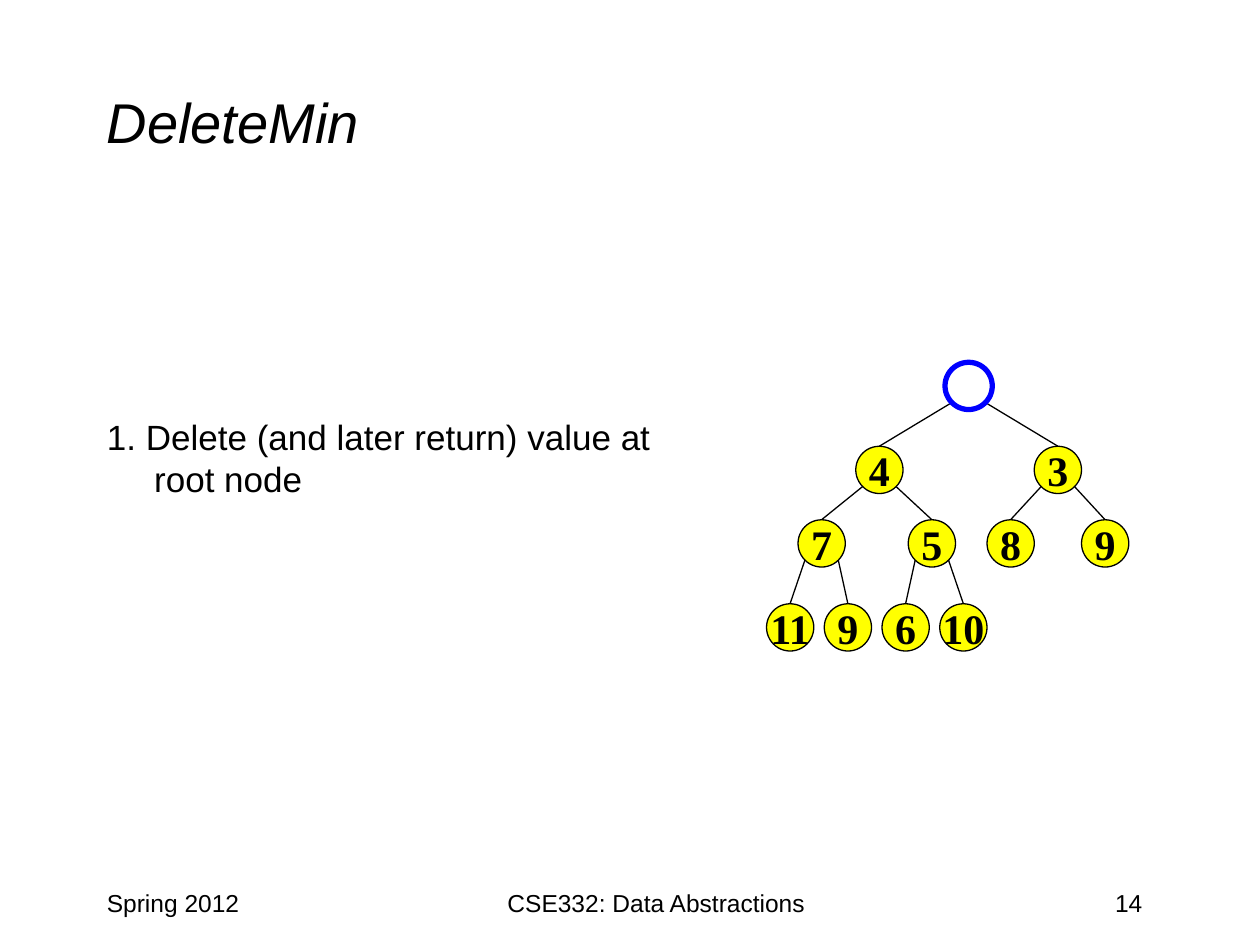
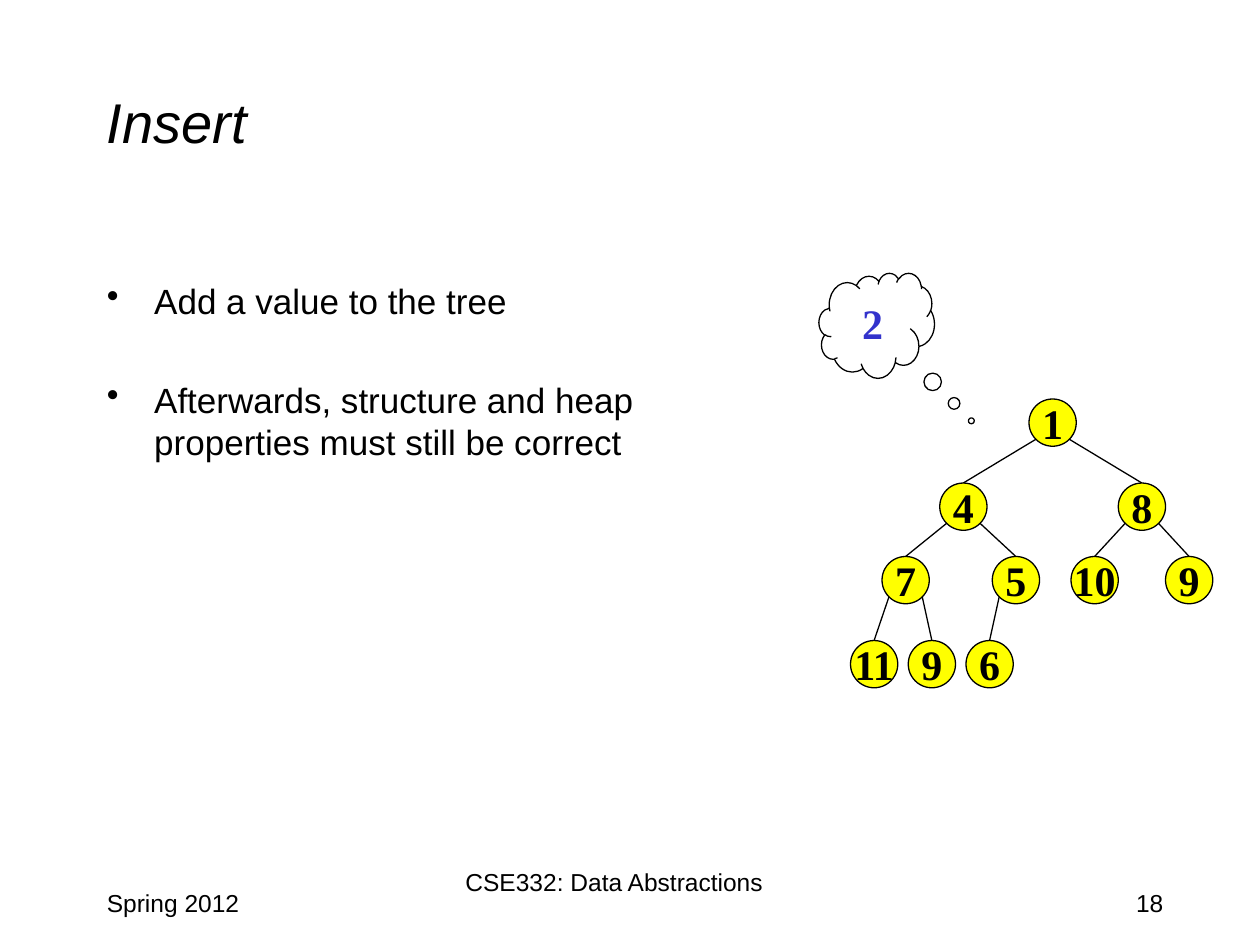
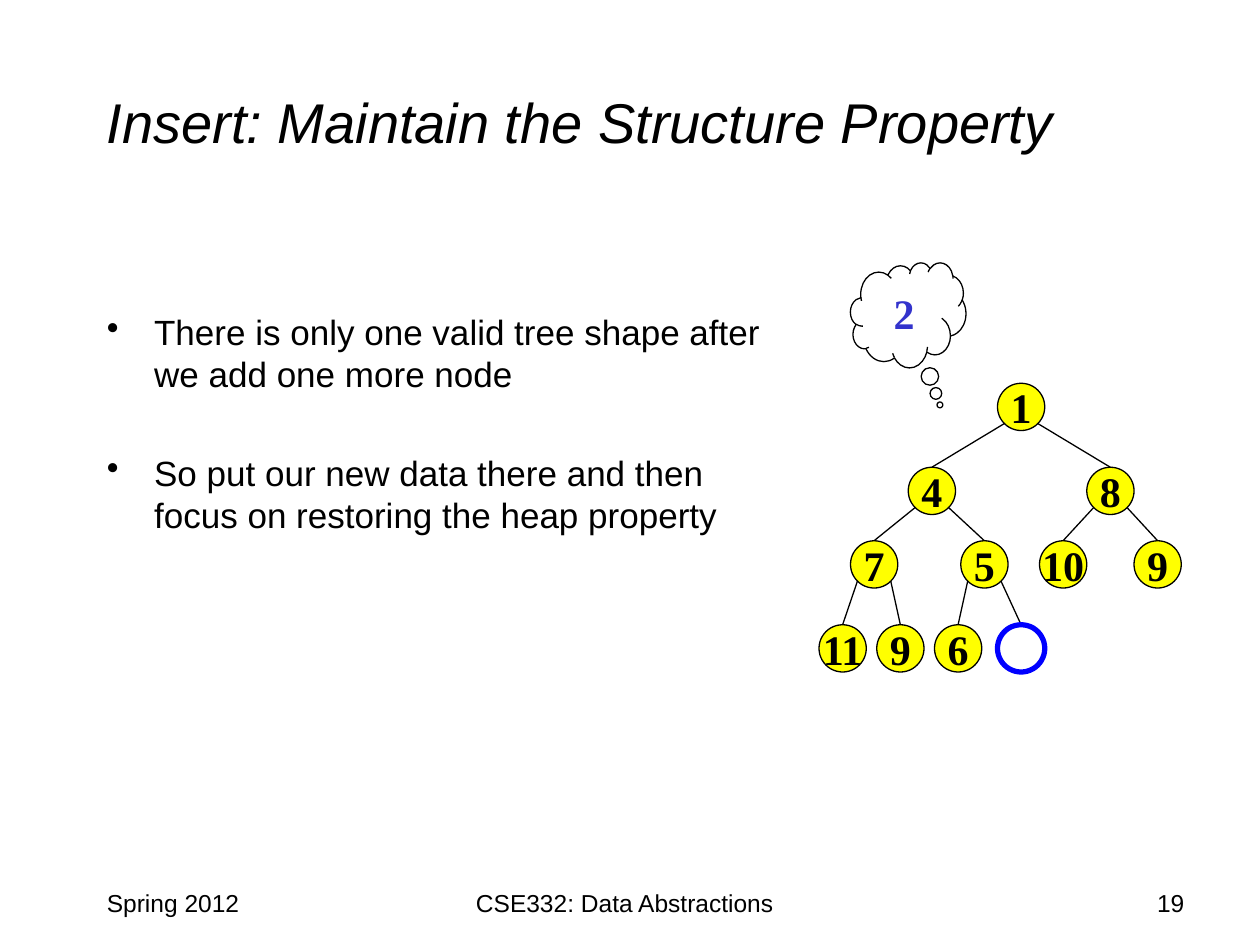
from dataclasses import dataclass
from typing import NamedTuple

from lxml.etree import SubElement
from pptx import Presentation
from pptx.dml.color import RGBColor
from pptx.enum.shapes import MSO_CONNECTOR, MSO_SHAPE
from pptx.enum.text import MSO_ANCHOR, PP_ALIGN
from pptx.oxml.ns import qn
from pptx.util import Pt


@dataclass(frozen=True)
class Theme:
    black: RGBColor = RGBColor(0, 0, 0)
    white: RGBColor = RGBColor(255, 255, 255)
    node: RGBColor = RGBColor(255, 255, 0)
    empty: RGBColor = RGBColor(0, 0, 255)
    thought: RGBColor = RGBColor(0x33, 0x33, 0xCC)
    sans: str = "Arial"
    serif: str = "Times New Roman"
    title: float = 32
    body: float = 20
    label: float = 24
    footer: float = 14
    thin: float = 0.75
    thick: float = 3


class Box(NamedTuple):
    x: float
    y: float
    w: float
    h: float


class Point(NamedTuple):
    x: float
    y: float


@dataclass(frozen=True)
class Thought:
    label: str
    box: Box
    tail: Point


@dataclass(frozen=True)
class HeapSlide:
    title: str
    lines: tuple[str, ...]
    body: Box
    bulleted: bool
    heap: tuple[str, ...]
    root: Point
    course: Point
    number: str
    number_x: float
    thought: Thought | None = None


THEME = Theme()
NODE = 27
HANG = 27
PARAGRAPH_GAP = 32.5
EDGE_X = (4, 23)
EDGE_Y = 23
SLOTS = (
    Point(0, 0),
    Point(-51, 48), Point(51, 48),
    Point(-84, 90), Point(-21, 90), Point(24, 90), Point(78, 90),
    Point(-102, 138), Point(-69, 138), Point(-36, 138), Point(-3, 138),
)
EMPTY_LEAF_SHIFT = 3
TITLE_BOX = Box(54, 24, 612, 90)
DATE_BOX = Box(54, 504, 150, 36)
COURSE_SIZE = (270, 36)
NUMBER_WIDTH = 90

SLIDES = (
    HeapSlide(
        title="DeleteMin",
        lines=("1. Delete (and later return) value at root node",),
        body=Box(54, 234, 342, 150),
        bulleted=False,
        heap=("", "4", "3", "7", "5", "8", "9", "11", "9", "6", "10"),
        root=Point(540, 207),
        course=Point(240, 504),
        number="14",
        number_x=645,
    ),
    HeapSlide(
        title="Insert",
        lines=(
            "Add a value to the tree",
            "Afterwards, structure and heap properties must still be correct",
        ),
        body=Box(54, 156, 378, 324),
        bulleted=True,
        heap=("1", "4", "8", "7", "5", "10", "9", "11", "9", "6"),
        root=Point(588, 228),
        course=Point(216, 492),
        number="18",
        number_x=657,
        thought=Thought("2", Box(468, 156, 66, 60), Point(0.82, 0.908)),
    ),
    HeapSlide(
        title="Insert: Maintain the Structure Property",
        lines=(
            "There is only one valid tree shape after we add one more node",
            "So put our new data there and then focus on restoring the heap property",
        ),
        body=Box(54, 174, 396, 150),
        bulleted=True,
        heap=("1", "4", "8", "7", "5", "10", "9", "11", "9", "6", ""),
        root=Point(570, 219),
        course=Point(222, 504),
        number="19",
        number_x=669,
        thought=Thought("2", Box(486, 150, 66, 60), Point(0.275, 0.856)),
    ),
)


def emu(box: Box) -> list[int]:
    return [Pt(v) for v in box]


def write(tf, *lines: str, size: float, font: str = THEME.sans,
          color: RGBColor = THEME.black, bold: bool = False, italic: bool = False,
          align=PP_ALIGN.LEFT, anchor=MSO_ANCHOR.TOP, wrap: bool = True,
          hang: float = 0, bulleted: bool = False) -> None:
    tf.word_wrap = wrap
    tf.vertical_anchor = anchor
    for i, line in enumerate(lines):
        p = tf.add_paragraph() if i else tf.paragraphs[0]
        p.alignment = align
        if i:
            p.space_before = Pt(PARAGRAPH_GAP)
        if hang:
            ppr = p._p.get_or_add_pPr()
            ppr.set("marL", str(Pt(hang)))
            ppr.set("indent", str(-Pt(hang)))
            if bulleted:
                SubElement(ppr, qn("a:buChar")).set("char", "•")
        r = p.add_run()
        r.text = line
        f = r.font
        f.name, f.size, f.bold, f.italic = font, Pt(size), bold, italic
        f.color.rgb = color


def add_text(s, box: Box, *lines: str, **fmt) -> None:
    write(s.shapes.add_textbox(*emu(box)).text_frame, *lines, **fmt)


def add_outline(s, kind, box: Box, fill: RGBColor | None, line: RGBColor,
                width: float):
    sp = s.shapes.add_shape(kind, *emu(box))
    sp.shadow.inherit = False
    if fill is None:
        sp.fill.background()
    else:
        sp.fill.solid()
        sp.fill.fore_color.rgb = fill
    sp.line.color.rgb = line
    sp.line.width = Pt(width)
    return sp


def add_label(sp, text: str, color: RGBColor) -> None:
    write(sp.text_frame, text, size=THEME.label, font=THEME.serif, color=color,
          bold=True, align=PP_ALIGN.CENTER, anchor=MSO_ANCHOR.MIDDLE, wrap=False)


def add_node(s, at: Point, label: str) -> None:
    box = Box(at.x, at.y, NODE, NODE)
    if label:
        sp = add_outline(s, MSO_SHAPE.OVAL, box, THEME.node, THEME.black, THEME.thin)
        add_label(sp, label, THEME.black)
    else:
        add_outline(s, MSO_SHAPE.OVAL, box, None, THEME.empty, THEME.thick)


def add_edge(s, parent: Point, child: Point, side: int) -> None:
    ends = (parent.x + EDGE_X[side], parent.y + EDGE_Y, child.x + NODE / 2, child.y)
    cx = s.shapes.add_connector(MSO_CONNECTOR.STRAIGHT, *[Pt(v) for v in ends])
    cx.line.color.rgb = THEME.black
    cx.line.width = Pt(THEME.thin)
    SubElement(cx._element.spPr, qn("a:effectLst"))


def add_heap(s, heap: tuple[str, ...], root: Point) -> None:
    spots = [
        Point(root.x + slot.x + (EMPTY_LEAF_SHIFT if i and not label else 0),
              root.y + slot.y)
        for i, (label, slot) in enumerate(zip(heap, SLOTS))
    ]
    for i in range(1, len(spots)):
        add_edge(s, spots[(i - 1) // 2], spots[i], (i - 1) % 2)
    for at, label in zip(spots, heap):
        add_node(s, at, label)


def add_thought(s, thought: Thought) -> None:
    sp = add_outline(s, MSO_SHAPE.CLOUD_CALLOUT, thought.box, THEME.white,
                     THEME.black, THEME.thin)
    sp.adjustments[0], sp.adjustments[1] = thought.tail
    add_label(sp, thought.label, THEME.thought)


def add_footer(s, spec_slide: HeapSlide) -> None:
    course = Box(*spec_slide.course, *COURSE_SIZE)
    number = Box(spec_slide.number_x - NUMBER_WIDTH / 2, DATE_BOX.y,
                 NUMBER_WIDTH, DATE_BOX.h)
    add_text(s, DATE_BOX, "Spring 2012", size=THEME.footer)
    add_text(s, course, "CSE332: Data Abstractions", size=THEME.footer,
             align=PP_ALIGN.CENTER)
    add_text(s, number, spec_slide.number, size=THEME.footer, align=PP_ALIGN.CENTER)


def add_heap_slide(prs, content: HeapSlide) -> None:
    s = prs.slides.add_slide(prs.slide_layouts[6])
    add_text(s, TITLE_BOX, content.title, size=THEME.title, italic=True,
             anchor=MSO_ANCHOR.MIDDLE)
    add_text(s, content.body, *content.lines, size=THEME.body, hang=HANG,
             bulleted=content.bulleted)
    add_heap(s, content.heap, content.root)
    if content.thought:
        add_thought(s, content.thought)
    add_footer(s, content)


def main() -> None:
    prs = Presentation()
    prs.slide_width, prs.slide_height = Pt(720), Pt(540)
    for content in SLIDES:
        add_heap_slide(prs, content)
    prs.save("out.pptx")


if __name__ == "__main__":
    main()
